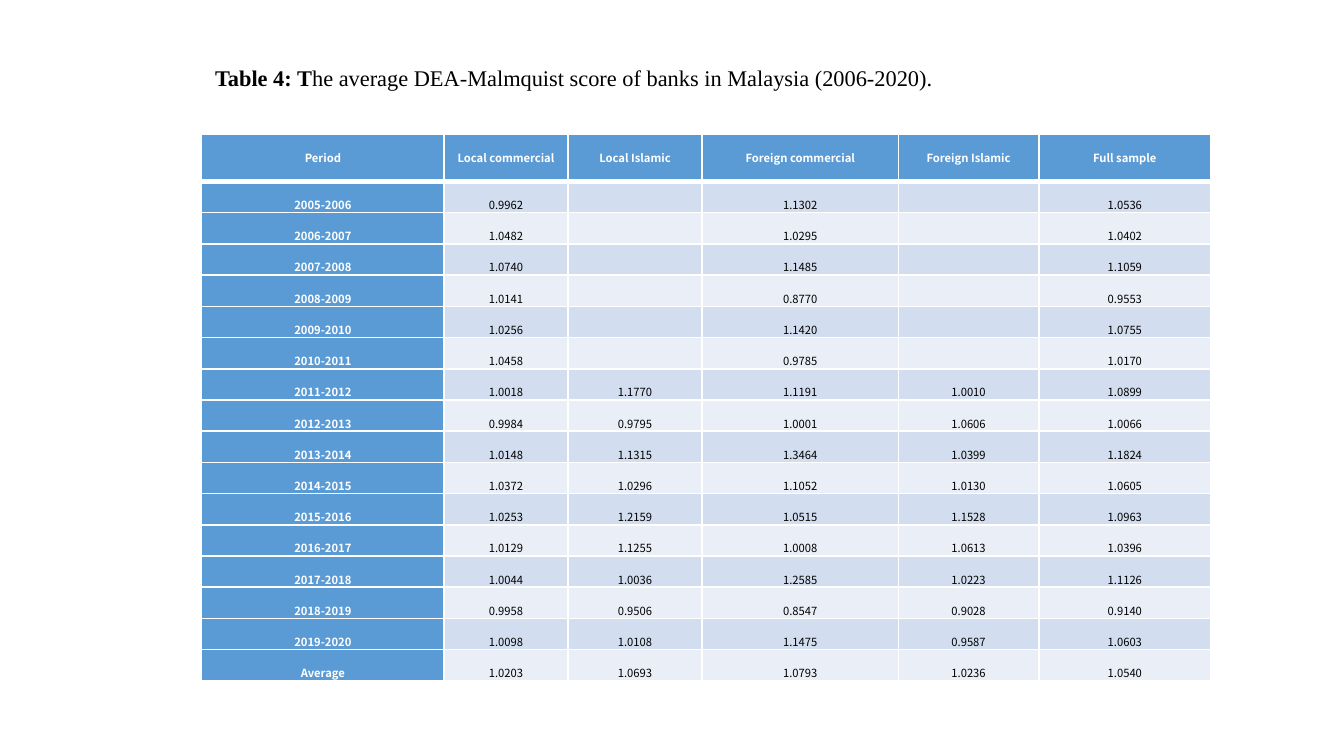
import lxml.etree
import pptx
import pptx.dml.color
import pptx.enum.text
import pptx.oxml.ns
import pptx.util

RGB = pptx.dml.color.RGBColor
ALIGN = pptx.enum.text.PP_ALIGN
ANCHOR = pptx.enum.text.MSO_ANCHOR
qn = pptx.oxml.ns.qn

PX = 4572  # 200 px to the inch
BLUE = RGB(0x5B, 0x9B, 0xD5)
BANDS = [RGB(0xD2, 0xDE, 0xEF), RGB(0xEA, 0xEF, 0xF7)]
WHITE = RGB(0xFF, 0xFF, 0xFF)
BLACK = RGB(0x00, 0x00, 0x00)

SERIF = {"name": "Times New Roman", "size": pptx.util.Pt(12)}
SANS = {"name": "Noto Sans CJK SC", "size": pptx.util.Pt(6)}
HEAD = {**SANS, "bold": True}
BODY = {**SANS, "bold": False}

LEFT = 300
COLS = [361, 184, 200, 292, 209, 256]
HIGH, TOP = 814, 70  # whole table, header row
ROWS = [
    ["Period", "Local commercial", "Local Islamic", "Foreign commercial",
     "Foreign Islamic", "Full sample"],
    ["2005-2006", "0.9962", "", "1.1302", "", "1.0536"],
    ["2006-2007", "1.0482", "", "1.0295", "", "1.0402"],
    ["2007-2008", "1.0740", "", "1.1485", "", "1.1059"],
    ["2008-2009", "1.0141", "", "0.8770", "", "0.9553"],
    ["2009-2010", "1.0256", "", "1.1420", "", "1.0755"],
    ["2010-2011", "1.0458", "", "0.9785", "", "1.0170"],
    ["2011-2012", "1.0018", "1.1770", "1.1191", "1.0010", "1.0899"],
    ["2012-2013", "0.9984", "0.9795", "1.0001", "1.0606", "1.0066"],
    ["2013-2014", "1.0148", "1.1315", "1.3464", "1.0399", "1.1824"],
    ["2014-2015", "1.0372", "1.0296", "1.1052", "1.0130", "1.0605"],
    ["2015-2016", "1.0253", "1.2159", "1.0515", "1.1528", "1.0963"],
    ["2016-2017", "1.0129", "1.1255", "1.0008", "1.0613", "1.0396"],
    ["2017-2018", "1.0044", "1.0036", "1.2585", "1.0223", "1.1126"],
    ["2018-2019", "0.9958", "0.9506", "0.8547", "0.9028", "0.9140"],
    ["2019-2020", "1.0098", "1.0108", "1.1475", "0.9587", "1.0603"],
    ["Average", "1.0203", "1.0693", "1.0793", "1.0236", "1.0540"],
]


def px(num):
    return pptx.util.Emu(num * PX)


def apply(item, form):
    for key, value in form.items():
        setattr(item, key, value)


def add_run(para, text, form, color):
    run = para.add_run()
    run.text = text
    apply(run.font, form)
    run.font.color.rgb = color


def add_title(slide):
    title = slide.shapes.title
    apply(title, {"left": px(LEFT), "top": px(86),
                  "width": px(sum(COLS)), "height": px(60)})
    apply(title.text_frame, {
        "word_wrap": True, "vertical_anchor": ANCHOR.TOP,
        "auto_size": pptx.enum.text.MSO_AUTO_SIZE.SHAPE_TO_FIT_TEXT})
    para = title.text_frame.paragraphs[0]
    para.alignment = ALIGN.JUSTIFY
    add_run(para, "Table 4: T", {**SERIF, "bold": True}, BLACK)
    add_run(para, "he average DEA-Malmquist score of banks in Malaysia "
            "(2006-2020).", {**SERIF, "bold": False}, BLACK)


def set_edges(cell, widths):
    """Draw white borders; they must come before the fill."""
    props = cell._tc.get_or_add_tcPr()
    for pos, (side, width) in enumerate(widths.items()):
        line = lxml.etree.Element(qn("a:ln" + side),
                                  w=str(pptx.util.Pt(width)))
        fill = lxml.etree.SubElement(line, qn("a:solidFill"))
        lxml.etree.SubElement(fill, qn("a:srgbClr"), val=str(WHITE))
        props.insert(pos, line)


def fill_cell(cell, text, row, col):
    head = row == 0 or col == 0
    apply(cell, {
        "margin_left": px(8), "margin_right": px(8),
        "margin_top": 0, "margin_bottom": 0,
        "vertical_anchor": ANCHOR.BOTTOM if row else ANCHOR.MIDDLE})
    cell.fill.solid()
    cell.fill.fore_color.rgb = BLUE if head else BANDS[(row - 1) % 2]
    set_edges(cell, {"L": 1, "R": 1, "T": 3 if row == 1 else 1,
                     "B": 3 if row == 0 else 1})
    para = cell.text_frame.paragraphs[0]
    para.alignment = ALIGN.CENTER
    if text:
        add_run(para, text, HEAD if head else BODY,
                WHITE if head else BLACK)
    else:  # small end mark keeps the empty cell from growing its row
        lxml.etree.SubElement(para._p, qn("a:endParaRPr"), sz="600")


def add_scores(slide):
    table = slide.shapes.add_table(
        len(ROWS), len(COLS), px(LEFT), px(200),
        px(sum(COLS)), px(HIGH)).table
    for col, width in zip(table.columns, COLS):
        col.width = px(width)
    for num, row in enumerate(table.rows):
        row.height = px(HIGH - TOP) // (len(ROWS) - 1) if num else px(TOP)
        for col, text in enumerate(ROWS[num]):
            fill_cell(table.cell(num, col), text, num, col)


def main():
    deck = pptx.Presentation()
    apply(deck, {"slide_width": px(2000), "slide_height": px(1125)})
    slide = deck.slides.add_slide(deck.slide_layouts[5])  # title only
    add_title(slide)
    add_scores(slide)
    deck.save("out.pptx")


if __name__ == "__main__":
    main()
